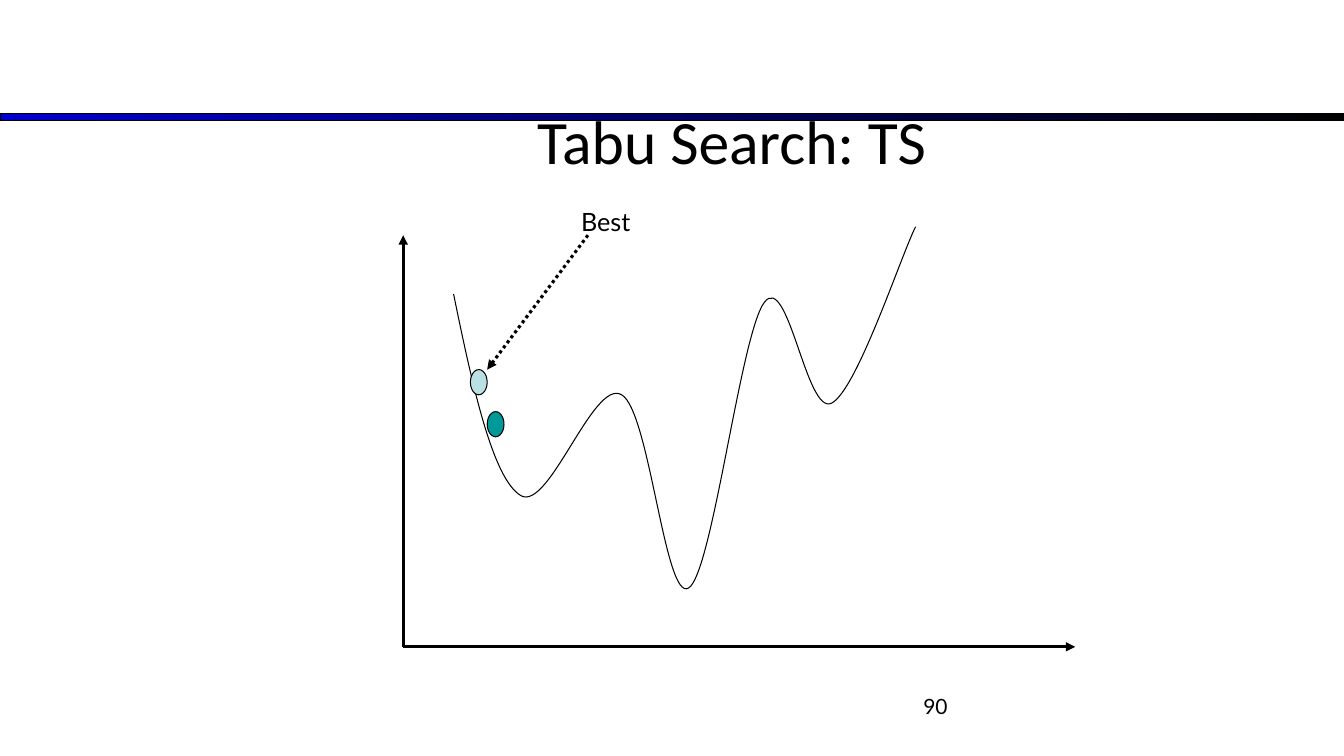
"""Build the Tabu Search slide: a cost curve with the best and current solutions."""
import itertools
from dataclasses import dataclass

import lxml.etree
import pptx
import pptx.dml.color
import pptx.enum.dml
import pptx.enum.shapes
import pptx.enum.text
import pptx.oxml.ns
import pptx.util

Pt = pptx.util.Pt
qn = pptx.oxml.ns.qn
ALIGN = pptx.enum.text.PP_ALIGN
ANCHOR = pptx.enum.text.MSO_ANCHOR
SHAPE = pptx.enum.shapes.MSO_SHAPE
BLACK = "000000"


@dataclass
class Label:
    text: str
    box: tuple[float, float, float, float]
    font: str
    size: float
    align: ALIGN = ALIGN.LEFT
    anchor: ANCHOR = ANCHOR.TOP


@dataclass
class Arrow:
    start: tuple[float, float]
    end: tuple[float, float]
    dotted: bool = False


@dataclass
class Solution:
    left: float
    top: float
    fill: str


LABELS = [
    Label("90", (516, 492, 168, 37.5), "Lato", 15, ALIGN.RIGHT),
    Label("Tabu Search: TS", (216, 67.5, 613.5, 65), "Calibri", 44, ALIGN.CENTER, ANCHOR.MIDDLE),
    Label("Best", (408, 144, 84, 29), "Lato", 18),
]
ORIGIN = (288, 462)
ARROWS = [
    Arrow(ORIGIN, (288, 168)),
    Arrow(ORIGIN, (768, 462)),
    Arrow((420, 168), (348, 264), dotted=True),
]
SOLUTIONS = [Solution(348, 294, "009999"), Solution(336, 264, "BBE0E3")]
CURVE_START = (324, 210)
CURVE = [
    ((337.5, 276), (352, 342), (372, 354)),
    ((392, 366), (424, 270), (444, 282)),
    ((464, 293), (475, 431), (492, 420)),
    ((509, 409), (529, 238.5), (546, 216)),
    ((563, 193.5), (576, 297), (594, 288)),
    ((612, 279), (643.5, 183), (654, 162)),
]


def rgb(color: str) -> pptx.dml.color.RGBColor:
    return pptx.dml.color.RGBColor.from_string(color)


def set_line(sp, width: float) -> None:
    sp.line.color.rgb = rgb(BLACK)
    sp.line.width = Pt(width)


def add_shape(s, kind: SHAPE, box: tuple[float, float, float, float]):
    sp = s.shapes.add_shape(kind, *map(Pt, box))
    sp.shadow.inherit = False
    set_line(sp, 0.75)
    return sp


def add_bar(s) -> None:
    sp = add_shape(s, SHAPE.RECTANGLE, (0, 81, 960, 5.25))
    sp.fill.gradient()
    sp.fill.gradient_angle = 0
    for stop, color in zip(sp.fill.gradient_stops, ("0000CC", BLACK)):
        stop.color.rgb = rgb(color)


def add_label(s, label: Label) -> None:
    tf = s.shapes.add_textbox(*map(Pt, label.box)).text_frame
    tf.word_wrap = True
    tf.vertical_anchor = label.anchor
    tf.text = label.text
    p = tf.paragraphs[0]
    p.alignment = label.align
    r = p.runs[0]
    r.font.name = label.font
    r.font.size = Pt(label.size)
    r.font.color.rgb = rgb(BLACK)


def add_arrow(s, arrow: Arrow) -> None:
    sp = s.shapes.add_connector(
        pptx.enum.shapes.MSO_CONNECTOR.STRAIGHT, *map(Pt, arrow.start + arrow.end)
    )
    set_line(sp, 2.25)
    if arrow.dotted:
        sp.line.dash_style = pptx.enum.dml.MSO_LINE.ROUND_DOT
    lxml.etree.SubElement(sp.line._get_or_add_ln(), qn("a:tailEnd"), type="triangle")
    lxml.etree.SubElement(sp._element.spPr, qn("a:effectLst"))


def add_curve(s) -> None:
    points = [(Pt(x), Pt(y)) for x, y in itertools.chain.from_iterable(CURVE)]
    builder = s.shapes.build_freeform(*map(Pt, CURVE_START))
    sp = builder.add_line_segments(points, close=False).convert_to_shape()
    sp.shadow.inherit = False
    sp.fill.background()
    set_line(sp, 0.75)
    outline = next(sp._element.iter(qn("a:path")))
    segments = outline.findall(qn("a:lnTo"))
    for i in range(0, len(segments), 3):
        bezier = lxml.etree.SubElement(outline, qn("a:cubicBezTo"))
        for segment in segments[i:i + 3]:
            bezier.append(segment[0])
            outline.remove(segment)


def add_solution(s, solution: Solution) -> None:
    sp = add_shape(s, SHAPE.OVAL, (solution.left, solution.top, 12, 18))
    sp.fill.solid()
    sp.fill.fore_color.rgb = rgb(solution.fill)


def main() -> None:
    prs = pptx.Presentation()
    prs.slide_width, prs.slide_height = Pt(960), Pt(540)
    s = prs.slides.add_slide(prs.slide_layouts[6])
    add_bar(s)
    for label in LABELS:
        add_label(s, label)
    add_curve(s)
    for arrow in ARROWS:
        add_arrow(s, arrow)
    for solution in SOLUTIONS:
        add_solution(s, solution)
    prs.save("out.pptx")


if __name__ == "__main__":
    main()
